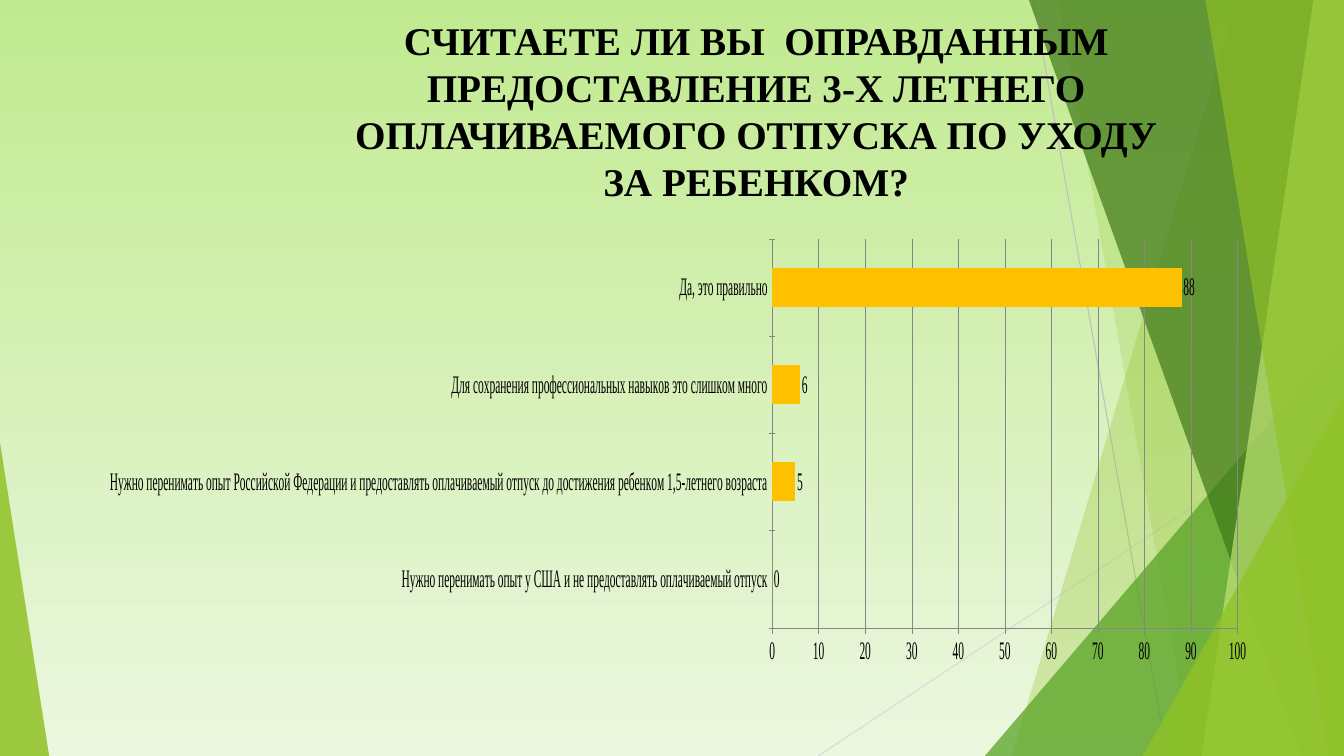
from dataclasses import dataclass

from lxml.etree import SubElement
from pptx import Presentation
from pptx.chart.data import CategoryChartData
from pptx.dml.color import RGBColor
from pptx.enum.chart import XL_CHART_TYPE, XL_LABEL_POSITION, XL_TICK_MARK
from pptx.enum.shapes import MSO_CONNECTOR, MSO_SHAPE
from pptx.enum.text import MSO_ANCHOR, PP_ALIGN
from pptx.oxml import parse_xml
from pptx.oxml.ns import nsdecls, qn
from pptx.slide import Slide
from pptx.util import Cm, Pt

WIDE, HIGH = 33.87, 19.05


def tint(code):
    return RGBColor.from_string(code)


def style(font, face, size, color, bold=False):
    font.name = face
    font.size = Pt(size)
    font.bold = bold
    font.color.rgb = tint(color)


def write(frame, text, align=PP_ALIGN.LEFT, anchor=MSO_ANCHOR.TOP, **look):
    frame.word_wrap = True
    frame.vertical_anchor = anchor
    line = frame.paragraphs[0]
    line.alignment = align
    run = line.add_run()
    run.text = text
    style(run.font, **look)


@dataclass
class Page:
    slide: Slide
    face: str = "Times New Roman"
    ink: str = "000000"
    grey: str = "868686"

    def backdrop(self, top, foot):
        fill = self.slide.background.fill
        fill.gradient()
        fill.gradient_angle = 270
        for stop, color, place in zip(fill.gradient_stops, (top, foot), (0, 1)):
            stop.color.rgb = tint(color)
            stop.position = place

    def line(self, start, end, color):
        rule = self.slide.shapes.add_connector(
            MSO_CONNECTOR.STRAIGHT, *map(Cm, start + end))
        rule.line.color.rgb = tint(color)
        rule.line.width = Pt(0.75)
        SubElement(rule._element.spPr, qn("a:effectLst"))

    def paint(self, shape, color, alpha):
        shape.shadow.inherit = False
        shape.line.fill.background()
        shape.fill.solid()
        shape.fill.fore_color.rgb = tint(color)
        code = shape._element.spPr.find(qn("a:solidFill"))[0]
        SubElement(code, qn("a:alpha"), val=str(alpha * 1000))

    def band(self, top, foot, color, alpha):
        path = self.slide.shapes.build_freeform(Cm(top), 0)
        corners = ((WIDE, 0), (WIDE, HIGH), (foot, HIGH))
        path.add_line_segments([(Cm(x), Cm(y)) for x, y in corners])
        self.paint(path.convert_to_shape(), color, alpha)

    def wedge(self, left, top, width, peak, color, alpha):
        shape = self.slide.shapes.add_shape(
            MSO_SHAPE.ISOSCELES_TRIANGLE, *map(Cm, (left, top, width, HIGH - top)))
        shape.adjustments[0] = peak
        self.paint(shape, color, alpha)

    def title(self, text, box):
        shape = self.slide.shapes.add_textbox(*map(Cm, box))
        write(shape.text_frame, text, PP_ALIGN.CENTER, MSO_ANCHOR.MIDDLE,
              face=self.face, size=28, color=self.ink, bold=True)

    def chart(self, votes, box, plot, color):
        data = CategoryChartData()
        data.categories = list(votes)
        data.add_series("Series 1", list(votes.values()))
        chart = self.slide.shapes.add_chart(
            XL_CHART_TYPE.BAR_CLUSTERED, *map(Cm, box), data).chart
        style(chart.font, self.face, 18, self.ink)
        chart.has_legend = chart.has_title = False

        bars = chart.plots[0]
        bars.gap_width = 150
        bars.vary_by_categories = False
        fill = bars.series[0].format.fill
        fill.solid()
        fill.fore_color.rgb = tint(color)
        bars.has_data_labels = True
        bars.data_labels.show_value = True
        bars.data_labels.position = XL_LABEL_POSITION.OUTSIDE_END

        scale = chart.value_axis
        scale.minimum_scale, scale.maximum_scale, scale.major_unit = 0, 100, 10
        scale.has_major_gridlines = True
        for axis in (scale, chart.category_axis):
            axis.major_tick_mark = XL_TICK_MARK.CROSS
            axis.minor_tick_mark = XL_TICK_MARK.NONE
        for part in (scale, chart.category_axis, scale.major_gridlines):
            part.format.line.color.rgb = tint(self.grey)
            part.format.line.width = Pt(0.75)

        area = chart._chartSpace.chart.plotArea
        for old in area.findall(qn("c:layout")):
            area.remove(old)
        sides = "".join(f'<c:{key} val="{val}"/>' for key, val in zip("xywh", plot))
        area.insert(0, parse_xml(
            f'<c:layout {nsdecls("c")}><c:manualLayout><c:layoutTarget val="inner"/>'
            f'<c:xMode val="edge"/><c:yMode val="edge"/>{sides}'
            '</c:manualLayout></c:layout>'))


def main():
    deck = Presentation()
    deck.slide_width, deck.slide_height = Cm(WIDE), Cm(HIGH)
    page = Page(deck.slides.add_slide(deck.slide_layouts[6]))
    page.backdrop("C1EA90", "EBF7DF")

    page.line((26.04, 0), (29.41, HIGH), "BFBFBF")
    page.line((WIDE, 10.24), (20.62, HIGH), "D9D9D9")
    page.band(31.19, 25.5, "90C226", 30)
    page.band(26.67, 30.05, "90C226", 20)
    page.wedge(24.82, 8.46, 9.05, 1, "54A021", 72)
    page.band(25.93, 32.79, "3F7819", 70)
    page.band(33.1, 30.28, "C0E474", 70)
    page.band(30.38, 33.48, "90C226", 65)
    page.wedge(28.8, 9.98, 5.07, 1, "90C226", 80)
    page.wedge(0, 11.15, 1.24, 0, "90C226", 85)

    page.title("СЧИТАЕТЕ ЛИ ВЫ  ОПРАВДАННЫМ ПРЕДОСТАВЛЕНИЕ 3-Х ЛЕТНЕГО "
               "ОПЛАЧИВАЕМОГО ОТПУСКА ПО УХОДУ ЗА РЕБЕНКОМ?",
               (8.08, 0.46, 21.95, 4.65))
    votes = {
        "Нужно перенимать опыт у США и не предоставлять оплачиваемый отпуск": 0,
        "Нужно перенимать опыт Российской Федерации и предоставлять "
        "оплачиваемый отпуск до достижения ребенком 1,5-летнего возраста": 5,
        "Для сохранения профессиональных навыков это слишком много": 6,
        "Да, это правильно": 88,
    }
    page.chart(votes, (2.77, 5.51, 28.68, 12.73), (0.08, 0.04, 0.9, 0.77), "FFC000")
    deck.save("out.pptx")


if __name__ == "__main__":
    main()
